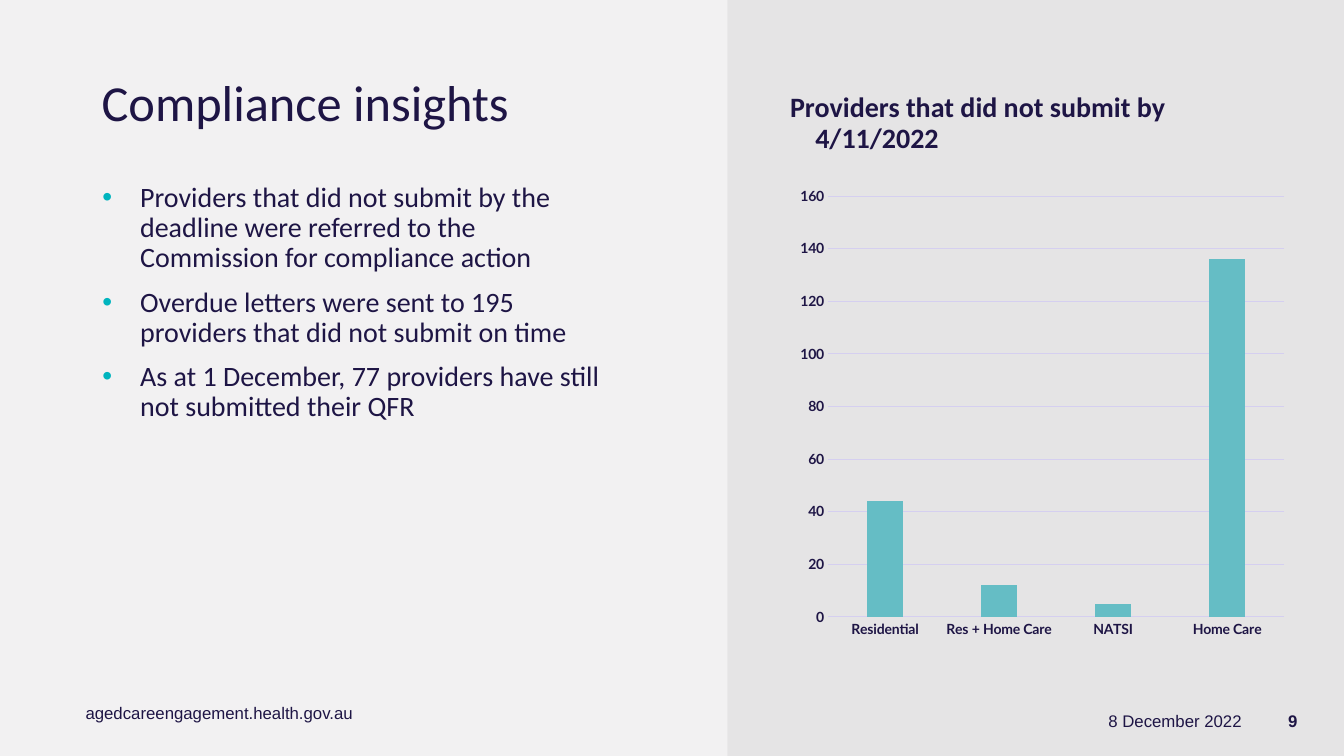
from lxml import etree
from pptx import Presentation
from pptx.chart.data import CategoryChartData
from pptx.dml.color import RGBColor
from pptx.enum.chart import XL_CHART_TYPE as ChartType, XL_TICK_MARK as TickMark
from pptx.enum.shapes import MSO_SHAPE as Shape
from pptx.enum.text import MSO_ANCHOR as Anchor, PP_ALIGN as Align
from pptx.oxml.ns import qn
from pptx.util import Pt

TITLE = "Compliance insights"
BULLETS = [
    "Providers that did not submit by the deadline were referred to the "
    "Commission for compliance action",
    "Overdue letters were sent to 195 providers that did not submit on time",
    "As at 1 December, 77 providers have still not submitted their QFR",
]
CHART_HEADING = "Providers that did not submit by 4/11/2022"
NON_SUBMITTERS = {"Residential": 44, "Res + Home Care": 12, "NATSI": 5, "Home Care": 136}
WEBSITE = "agedcareengagement.health.gov.au"
DATE = "8 December 2022"
PAGE_NUMBER = "9"

WIDTH, HEIGHT = 960, 540
PANEL_LEFT = 519.6
BODY_TOP = 127.4
FOOTER_TOP, FOOTER_HEIGHT = 500.4, 28.8
BACKGROUND, NAVY, TEAL, BAR, GRID = "F2F1F2", "1E1545", "00B4BE", "65BDC5", "D5CFF0"


def color(hex_code):
    return RGBColor.from_string(hex_code)


def add_text(box, lines, size, font="Calibri", bold=False, align=Align.LEFT,
             anchor=Anchor.TOP, line_spacing=1.0, space_before=0):
    left, top, width, height = box
    shape = slide.shapes.add_textbox(Pt(left), Pt(top), Pt(width), Pt(height))
    frame = shape.text_frame
    frame.word_wrap = True
    frame.vertical_anchor = anchor
    frame.text = "\n".join(lines)
    for paragraph in frame.paragraphs:
        paragraph.alignment = align
        paragraph.line_spacing = line_spacing
        paragraph.space_before = Pt(space_before)
        for run in paragraph.runs:
            run.font.size = Pt(size)
            run.font.name = font
            run.font.bold = bold
            run.font.color.rgb = color(NAVY)
    return frame.paragraphs


def hang(paragraph, indent, bullet_color=None):
    """Give a hanging indent, with a bullet if a colour is named."""
    properties = paragraph._p.get_or_add_pPr()
    properties.set("marL", str(Pt(indent)))
    properties.set("indent", str(-Pt(indent)))
    if bullet_color:
        holder = etree.SubElement(properties, qn("a:buClr"))
        etree.SubElement(holder, qn("a:srgbClr"), val=bullet_color)
        etree.SubElement(properties, qn("a:buFont"), typeface="Arial")
        etree.SubElement(properties, qn("a:buChar"), char="•")


def add_panel():
    panel = slide.shapes.add_shape(
        Shape.RECTANGLE, Pt(PANEL_LEFT), 0, Pt(WIDTH - PANEL_LEFT), Pt(HEIGHT))
    panel.shadow.inherit = False
    panel.line.fill.background()
    panel.fill.solid()
    panel.fill.fore_color.rgb = color("000000")
    tint = panel.fill._xPr.find(".//" + qn("a:srgbClr"))
    etree.SubElement(tint, qn("a:alpha"), val="5000")


def style_font(font, size):
    font.name = "Lato"
    font.size = Pt(size)
    font.bold = True
    font.color.rgb = color(NAVY)


def add_column_chart(left, top, width, height):
    data = CategoryChartData()
    data.categories = list(NON_SUBMITTERS)
    data.add_series("Series 1", list(NON_SUBMITTERS.values()))
    chart = slide.shapes.add_chart(
        ChartType.COLUMN_CLUSTERED, Pt(left), Pt(top), Pt(width), Pt(height), data).chart
    chart.has_title = False
    chart.has_legend = False
    style_font(chart.font, 9)

    plot = chart.plots[0]
    plot.vary_by_categories = False
    plot.gap_width = 219
    plot.overlap = -27
    fill = plot.series[0].format.fill
    fill.solid()
    fill.fore_color.rgb = color(BAR)

    categories, values = chart.category_axis, chart.value_axis
    for axis in (categories, values):
        axis.major_tick_mark = TickMark.NONE
        axis.minor_tick_mark = TickMark.NONE
        style_font(axis.tick_labels.font, 10)
    values.minimum_scale, values.maximum_scale, values.major_unit = 0, 160, 20
    values.format.line.fill.background()
    for line in (categories.format.line, values.major_gridlines.format.line):
        line.color.rgb = color(GRID)
        line.width = Pt(0.75)


presentation = Presentation()
presentation.slide_width, presentation.slide_height = Pt(WIDTH), Pt(HEIGHT)
slide = presentation.slides.add_slide(presentation.slide_layouts[6])
slide.background.fill.solid()
slide.background.fill.fore_color.rgb = color(BACKGROUND)

add_panel()
add_text((65.5, 53.3, 375, 43.2), [TITLE], 36, anchor=Anchor.MIDDLE, line_spacing=0.9)
heading = add_text((557.3, 63.4, 374, 51), [CHART_HEADING], 20, bold=True,
                   line_spacing=0.9, space_before=10)
hang(heading[0], 18)
add_column_chart(564.5, BODY_TOP, 360, 334.8)
for bullet in add_text((66, BODY_TOP, 374.4, 342.7), BULLETS, 20,
                       line_spacing=0.9, space_before=10):
    hang(bullet, 27, TEAL)

add_text((54, 498.2, 206, 21.6), [WEBSITE], 12, "Arial")
for text, left, width, bold in ((DATE, 678.2, 216, False), (PAGE_NUMBER, 901.4, 32.4, True)):
    add_text((left, FOOTER_TOP, width, FOOTER_HEIGHT), [text], 12, "Arial", bold,
             Align.RIGHT, Anchor.MIDDLE)

presentation.save("out.pptx")
